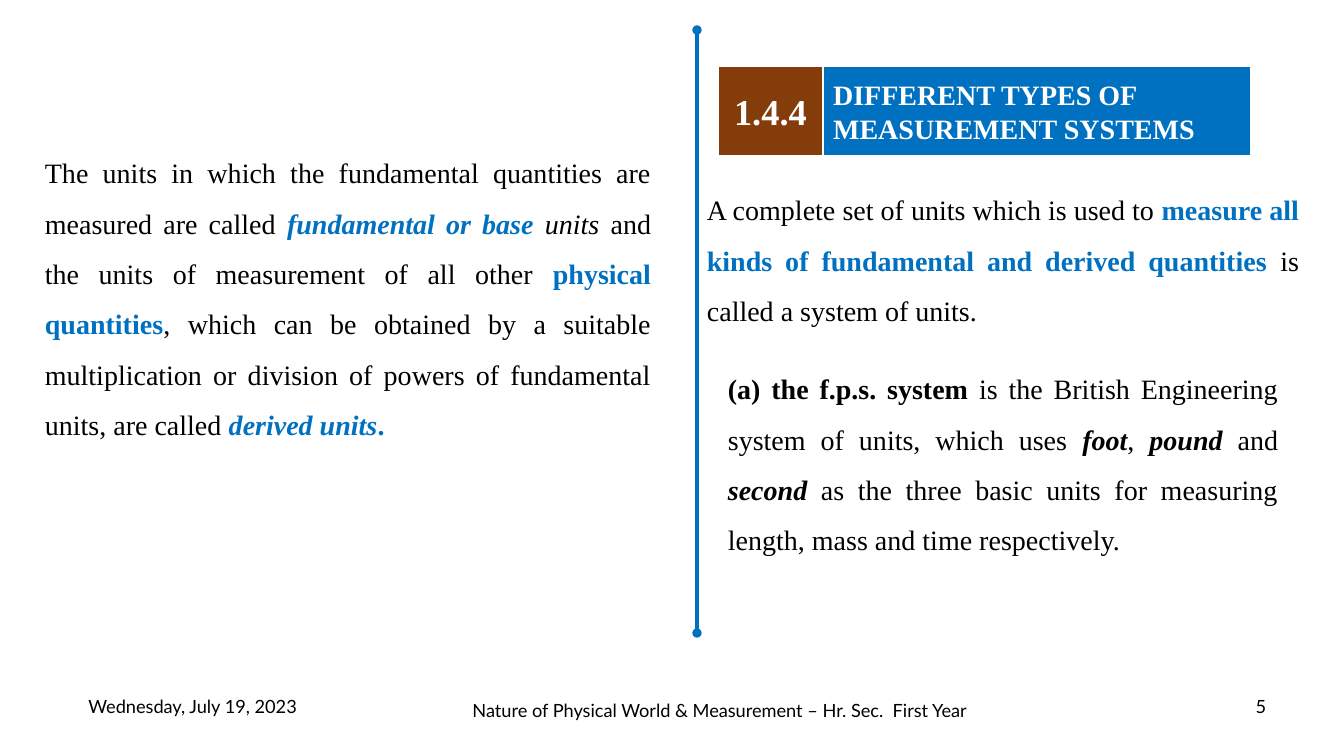
import pptx
import pptx.dml.color
import pptx.enum.shapes
import pptx.enum.text
import pptx.oxml
import pptx.oxml.ns
import pptx.util

ALIGN = pptx.enum.text.PP_ALIGN
ANCHOR = pptx.enum.text.MSO_ANCHOR
AUTO_SIZE = pptx.enum.text.MSO_AUTO_SIZE
EMU_PER_PX = 914400 / 100.8
SERIF, SANS = "Times New Roman", "Lato"
COLOURS = {"blue": "0070C0", "brown": "843C0B", "black": "000000", "white": "FFFFFF"}

# Each run: text, colour, bold, italic
PLAIN = ("black", False, False)
BOLD = ("black", True, False)
ITALIC = ("black", False, True)
BOLD_ITALIC = ("black", True, True)
KEY = ("blue", True, False)
KEY_ITALIC = ("blue", True, True)

BASE_AND_DERIVED_UNITS = [
    ("The units in which the fundamental quantities are measured are called ", PLAIN),
    ("fundamental or base ", KEY_ITALIC),
    ("units ", ITALIC),
    ("and the units of measurement of all other ", PLAIN),
    ("physical quantities", KEY),
    (", which can be obtained by a suitable multiplication or division of powers "
     "of fundamental units, are called ", PLAIN),
    ("derived units", KEY_ITALIC),
    (". ", KEY),
]
SYSTEM_OF_UNITS = [
    ("A complete set of units which is used to ", PLAIN),
    ("measure all kinds of fundamental and derived quantities", KEY),
    (" is called a system of units. ", PLAIN),
]
FPS_SYSTEM = [
    ("(a) the f.p.s. system ", BOLD),
    ("is the British Engineering system of units, which uses ", PLAIN),
    ("foot", BOLD_ITALIC),
    (", ", PLAIN),
    ("pound ", BOLD_ITALIC),
    ("and ", PLAIN),
    ("second ", BOLD_ITALIC),
    ("as the three basic units for measuring length, mass and time respectively. ", PLAIN),
]


def px(length):
    return pptx.util.Emu(round(length * EMU_PER_PX))


def rgb(colour):
    return pptx.dml.color.RGBColor.from_string(COLOURS[colour])


def set_font(font, name, size, colour, bold=False):
    font.name = name
    font.size = pptx.util.Pt(size)
    font.color.rgb = rgb(colour)
    font.bold = bold


def add_passage(slide, box, runs):
    """Justified body text with emphasised terms."""
    frame = slide.shapes.add_textbox(*map(px, box)).text_frame
    frame.word_wrap = True
    frame.auto_size = AUTO_SIZE.SHAPE_TO_FIT_TEXT
    passage = frame.paragraphs[0]
    passage.alignment = ALIGN.JUSTIFY
    passage.line_spacing = 1.5
    passage.font.name = SERIF
    passage.font.size = pptx.util.Pt(20)
    for text, (colour, bold, italic) in runs:
        run = passage.add_run()
        run.text = text
        run.font.color.rgb = rgb(colour)
        run.font.bold = bold
        run.font.italic = italic


def style_heading_part(part, text, fill, size, alignment):
    part.fill.solid()
    part.fill.fore_color.rgb = rgb(fill)
    part.line.color.rgb = rgb("white")
    part.line.width = pptx.util.Pt(1.5)
    frame = part.text_frame
    frame.text = text
    frame.word_wrap = True
    frame.auto_size = AUTO_SIZE.NONE
    frame.vertical_anchor = ANCHOR.MIDDLE
    frame.paragraphs[0].alignment = alignment
    set_font(frame.paragraphs[0].font, SERIF, size, "white", bold=True)


def add_heading(slide, box):
    """Section number beside the slide title."""
    left, top, width, height = box
    number_width = 105
    number = slide.shapes.add_shape(
        pptx.enum.shapes.MSO_SHAPE.RECTANGLE, *map(px, (left, top, number_width, height)))
    number.shadow.inherit = False
    style_heading_part(number, "1.4.4", "brown", 26, ALIGN.CENTER)

    title = slide.shapes.title
    title.left, title.top = px(left + number_width), px(top)
    title.width, title.height = px(width - number_width), px(height)
    style_heading_part(title, "DIFFERENT TYPES OF MEASUREMENT SYSTEMS", "blue", 20, ALIGN.LEFT)


def add_divider(slide, x, top, bottom):
    divider = slide.shapes.add_connector(
        pptx.enum.shapes.MSO_CONNECTOR.STRAIGHT, px(x), px(top), px(x), px(bottom))
    divider.line.color.rgb = rgb("blue")
    divider.line.width = pptx.util.Pt(2.25)
    outline = divider.line._get_or_add_ln()
    for end in ("a:headEnd", "a:tailEnd"):
        outline.append(pptx.oxml.parse_xml(
            f'<{end} {pptx.oxml.ns.nsdecls("a")} type="oval"/>'))
    outline.addnext(pptx.oxml.parse_xml(f'<a:effectLst {pptx.oxml.ns.nsdecls("a")}/>'))


def add_footer(slide, box):
    """Date, lecture name and page number, placed from the left of the box."""
    left, top, height = box
    for text, offset, drop, width in (
        ("Wednesday, July 19, 2023", 0, 0, 241),
        ("Nature of Physical World & Measurement – Hr. Sec.  First Year", 387, 4, 521),
        ("5", 1168, 0, 42),
    ):
        frame = slide.shapes.add_textbox(
            *map(px, (left + offset, top + drop, width, height))).text_frame
        frame.text = text
        frame.word_wrap = True
        frame.vertical_anchor = ANCHOR.MIDDLE
        frame.paragraphs[0].alignment = ALIGN.CENTER
        set_font(frame.paragraphs[0].font, SANS, 13, "black")


def main():
    deck = pptx.Presentation()
    deck.slide_width, deck.slide_height = px(1344), px(756)
    slide = deck.slides.add_slide(deck.slide_layouts.get_by_name("Title Only"))
    add_footer(slide, (72, 686, 40))
    add_divider(slide, 697, 30, 633)
    add_heading(slide, (718, 66, 533, 90))
    add_passage(slide, (35, 134, 626, 316), BASE_AND_DERIVED_UNITS)
    add_passage(slide, (697, 171, 612, 163), SYSTEM_OF_UNITS)
    add_passage(slide, (718, 350, 570, 265), FPS_SYSTEM)
    deck.save("out.pptx")


if __name__ == "__main__":
    main()
